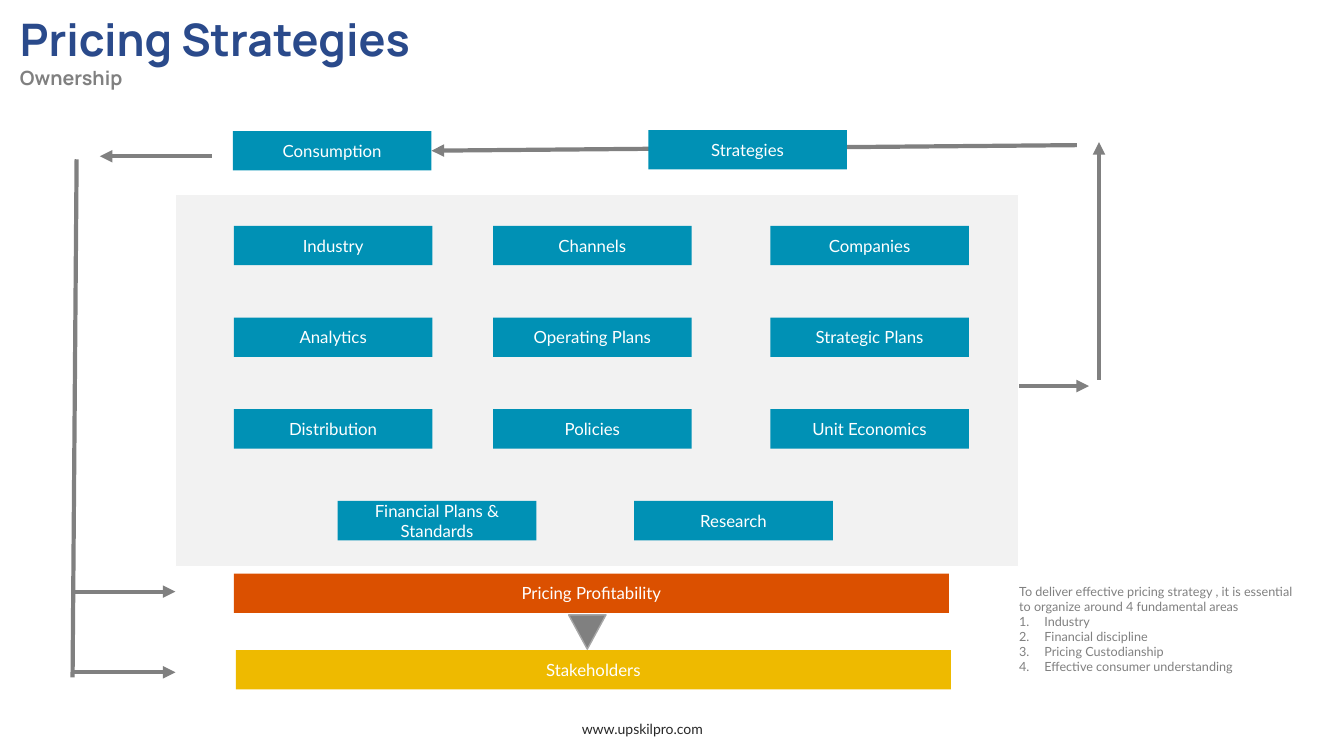
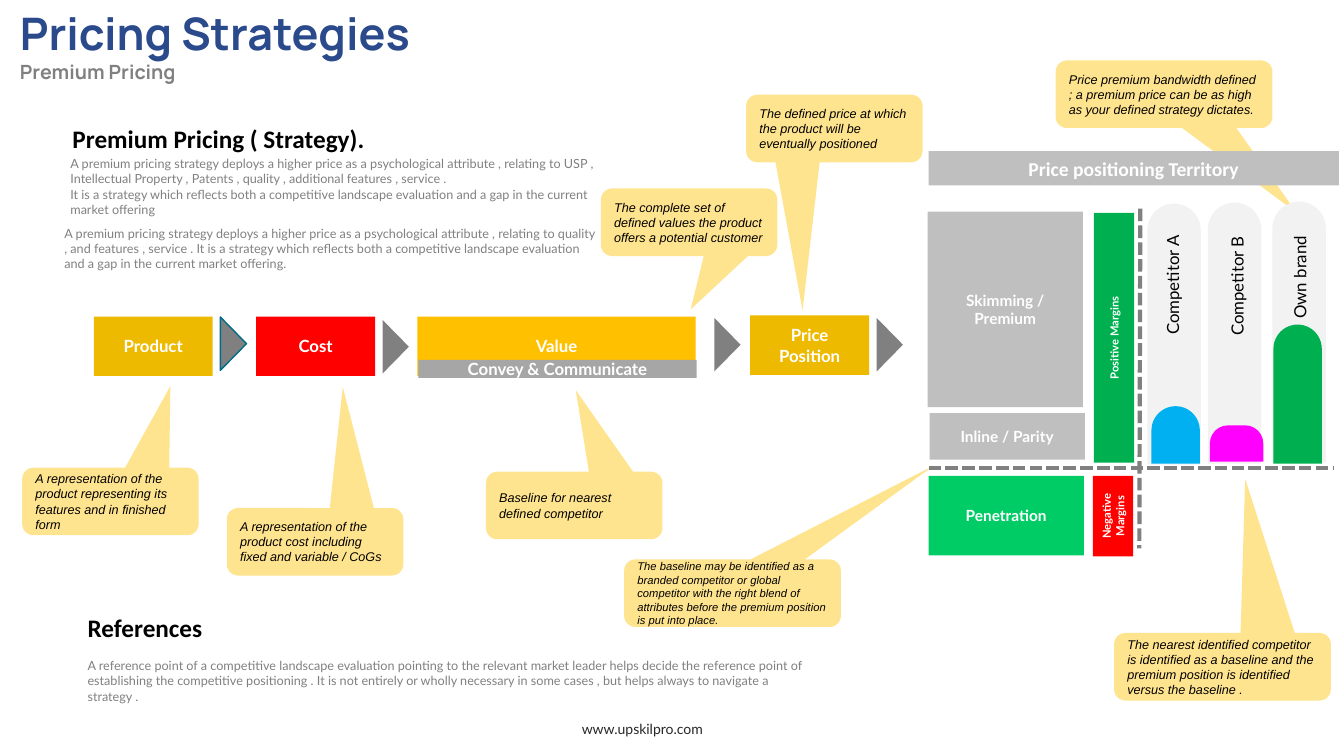
from dataclasses import dataclass

from lxml import etree
from pptx import Presentation
from pptx.dml.color import RGBColor
from pptx.enum.dml import MSO_LINE
from pptx.enum.shapes import MSO_CONNECTOR, MSO_SHAPE
from pptx.enum.text import MSO_ANCHOR, PP_ALIGN
from pptx.oxml.ns import qn
from pptx.util import Pt

RECT = MSO_SHAPE.RECTANGLE
TRIANGLE = MSO_SHAPE.ISOSCELES_TRIANGLE
ROUND_TOP = MSO_SHAPE.ROUND_2_SAME_RECTANGLE
CALLOUT = MSO_SHAPE.ROUNDED_RECTANGULAR_CALLOUT
STRAIGHT = MSO_CONNECTOR.STRAIGHT
DASH = MSO_LINE.SQUARE_DOT
LEFT, CENTER = PP_ALIGN.LEFT, PP_ALIGN.CENTER
TOP, MIDDLE = MSO_ANCHOR.TOP, MSO_ANCHOR.MIDDLE
RIGHT_SIDE = 3
PX = 9144


@dataclass(frozen=True)
class Theme:
    navy: str = "2A4A8B"
    grey: str = "808080"
    mid_grey: str = "A6A6A6"
    light_grey: str = "BFBFBF"
    pale: str = "F2F2F2"
    white: str = "FFFFFF"
    black: str = "000000"
    ink: str = "272727"
    teal: str = "0091B5"
    dark_teal: str = "006B86"
    orange: str = "DB5000"
    gold: str = "EEBA00"
    amber: str = "FFC000"
    note: str = "FFE48F"
    red: str = "FF0000"
    green: str = "00B050"
    mint: str = "00CC66"
    blue: str = "00B0F0"
    magenta: str = "FF00FF"
    body_font: str = "Lato"
    title_font: str = "Manrope"
    head_font: str = "Calibri"
    note_font: str = "Arial"
    title: int = 32
    head: int = 18
    subtitle: int = 14
    label: int = 12
    level: int = 11
    footer: int = 10
    body: int = 9
    small: int = 8


T = Theme()


def rgb(value):
    return RGBColor.from_string(value)


def px(*values):
    return [round(v * PX) for v in values]


def write(sp, text, size=T.label, font=T.body_font, color=T.white, bold=False,
          italic=False, align=CENTER, anchor=MIDDLE, numbered=False, more=False):
    tf = sp.text_frame
    tf.word_wrap = True
    tf.vertical_anchor = anchor
    for i, line in enumerate(text.split("\n")):
        p = tf.add_paragraph() if i or more else tf.paragraphs[0]
        p.alignment = align
        if numbered:
            pPr = p._p.get_or_add_pPr()
            pPr.set("marL", str(25 * PX))
            pPr.set("indent", str(-25 * PX))
            etree.SubElement(pPr, qn("a:buAutoNum"), type="arabicPeriod")
        r = p.add_run()
        r.text = line
        f = r.font
        f.size, f.name, f.bold, f.italic = Pt(size), font, bold, italic
        f.color.rgb = rgb(color)


def add_text(s, box, text, **fmt):
    sp = s.shapes.add_textbox(*px(*box))
    write(sp, text, **{"align": LEFT, "anchor": TOP, "color": T.grey, "size": T.body, **fmt})
    return sp


def add_shape(s, kind, box, fill, text="", line=None, rot=0, **fmt):
    sp = s.shapes.add_shape(kind, *px(*box))
    sp.shadow.inherit = False
    sp.rotation = rot
    sp.fill.solid()
    sp.fill.fore_color.rgb = rgb(fill)
    if line:
        sp.line.color.rgb = rgb(line)
        sp.line.width = Pt(1)
    else:
        sp.line.fill.background()
    if text:
        write(sp, text, **fmt)
    return sp


def add_line(s, start, end, arrow=True, dash=None, target=None):
    cx = s.shapes.add_connector(STRAIGHT, *px(*start, *end))
    cx.line.color.rgb = rgb(T.grey)
    cx.line.width = Pt(3)
    if dash:
        cx.line.dash_style = dash
    if arrow:
        etree.SubElement(cx.line._get_or_add_ln(), qn("a:tailEnd"), type="triangle")
    etree.SubElement(cx._element.spPr, qn("a:effectLst"))
    if target:
        cx.end_connect(target, RIGHT_SIDE)


def add_callout(s, box, tip, text, size=T.body):
    x, y, w, h = box
    sp = add_shape(s, CALLOUT, box, T.note, text, size=size, font=T.note_font,
                   color=T.black, italic=True, align=LEFT)
    sp.adjustments[0] = (tip[0] - x - w / 2) / w
    sp.adjustments[1] = (tip[1] - y - h / 2) / h


def new_slide(prs, top, subtitle):
    s = prs.slides.add_slide(prs.slide_layouts[6])
    sp = add_text(s, (10, top, 1053, 88), "Pricing Strategies", size=T.title,
                  font=T.title_font, color=T.navy, bold=True)
    write(sp, subtitle, size=T.subtitle, font=T.title_font, color=T.grey, bold=True,
          align=LEFT, anchor=TOP, more=True)
    add_text(s, (412, 710, 450, 40), "www.upskilpro.com", size=T.footer,
             color=T.ink, align=CENTER)
    return s


def area_panel(s, box):
    x, y, _, _ = box
    add_shape(s, RECT, box, T.pale, line=T.white)
    cols = (58, 315, 590)
    rows = (
        (cols, ("Industry", "Channels", "Companies")),
        (cols, ("Analytics", "Operating Plans", "Strategic Plans")),
        (cols, ("Distribution", "Policies", "Unit Economics")),
        ((161, 455), ("Financial Plans & Standards", "Research")),
    )
    for i, (lefts, names) in enumerate(rows):
        for left, name in zip(lefts, names):
            add_shape(s, RECT, (x + left, y + 31 + 91 * i, 197, 39), T.teal, name)


def flow_loop(s, box):
    x, y, w, _ = box
    sp = add_shape(s, RECT, (x + 159, y + 1, 197, 39), T.teal, "Consumption")
    add_line(s, (x + 996, y + 15), (x + 356, y + 20), target=sp)
    add_shape(s, RECT, (x + 571, y, 197, 39), T.teal, "Strategies")
    add_line(s, (x, y + 543), (x + 4, y + 29), arrow=False)
    for start, end in (
        ((138, 26), (27, 26)),
        ((0, 458), (102, 458)),
        ((0, 538), (102, 538)),
        ((938, 254), (1008, 254)),
        ((w, 248), (w, 12)),
    ):
        add_line(s, (x + start[0], y + start[1]), (x + end[0], y + end[1]))


def outcome_bars(s, box):
    x, y, w, h = box
    add_shape(s, RECT, (x, y, w, 39), T.orange, "Pricing Profitability")
    add_shape(s, TRIANGLE, (x + 332, y + 41, 37, 34), T.grey, line=T.mid_grey, rot=180)
    add_shape(s, RECT, (x + 2, y + h - 39, w, 39), T.gold, "Stakeholders")


def ownership_slide(prs):
    s = new_slide(prs, 7, "Ownership")
    flow_loop(s, (72, 129, 1018, 543))
    area_panel(s, (174, 193, 836, 369))
    outcome_bars(s, (232, 569, 709, 115))
    sp = add_text(s, (1001, 574, 299, 131),
                  "To deliver effective pricing strategy , it is essential to organize "
                  "around 4 fundamental areas")
    write(sp, "Industry\nFinancial discipline\nPricing Custodianship\n"
          "Effective consumer understanding", size=T.body, color=T.grey, align=LEFT,
          anchor=TOP, numbered=True, more=True)


def price_chain(s, box):
    x, y, _, h = box
    for left, top, width, fill, name in (
        (0, 1, 118, T.gold, "Product"),
        (161, 1, 118, T.red, "Cost"),
        (321, 1, 276, T.amber, "Value"),
        (651, 0, 118, T.gold, "Price Position"),
    ):
        add_shape(s, RECT, (x + left, y + top, width, h), fill, name, bold=True)
    for left, top, line in ((112, 15, T.dark_teal), (273, 18, None),
                            (602, 16, None), (763, 16, None)):
        add_shape(s, TRIANGLE, (x + left, y + top, 53, 26), T.grey, line=line, rot=90)
    add_shape(s, RECT, (x + 322, y + 44, 276, 18), T.mid_grey,
              "Convey & Communicate", bold=True)


def price_territory(s, box):
    x, y, w, _ = box
    add_shape(s, RECT, (x + 1, y, w, 34), T.light_grey, "Price positioning Territory",
              size=T.subtitle, font=T.head_font, bold=True)
    for left, top, height, fill, name in (
        (0, 60, 194, T.light_grey, "Skimming / Premium"),
        (2, 260, 46, T.light_grey, "Inline / Parity"),
        (1, 322, 79, T.mint, "Penetration"),
    ):
        add_shape(s, RECT, (x + left, y + top, 154, height), fill, name,
                  size=T.level, bold=True)
    for left, top, width, fill, name in (
        (61, 165, 248, T.green, "Positive Margins"),
        (144, 342, 80, T.red, "Negative Margins"),
    ):
        add_shape(s, RECT, (x + left, y + top, width, 40), fill, name, rot=270,
                  size=T.small, bold=True)
    brands = (
        (218, 52, (222, 253, 48, 57), T.blue, "Competitor A", (183, 117)),
        (278, 51, (280, 272, 53, 36), T.magenta, "Competitor B", (247, 118)),
        (342, 50, (343, 172, 48, 138), T.green, "Own brand", (309, 101)),
    )
    for left, top, (bx, by, bw, bh), fill, name, (tx, ty) in brands:
        for part, color in (((x + left, y + top, 53, 259), T.pale),
                            ((x + bx, y + by, bw, bh), fill)):
            sp = add_shape(s, ROUND_TOP, part, color)
            sp.adjustments[0] = 0.5
        sp = add_text(s, (x + tx, y + ty, 120, 30), name, size=T.label, color=T.black)
        sp.text_frame.margin_right = 0
        sp.rotation = 270
    for start, end in (((1, 314), (403, 314)), ((211, 57), (210, 394))):
        add_line(s, (x + start[0], y + start[1]), (x + end[0], y + end[1]),
                 arrow=False, dash=DASH)


def strategy_text(s, box):
    x, y, _, _ = box
    for left, top, text in (
        (8, 0, "Premium Pricing ( Strategy)."),
        (23, 486, "References"),
    ):
        add_text(s, (x + left, y + top, 361, 40), text, size=T.head, font=T.head_font,
                 color=T.black, bold=True)
    for left, top, width, height, text in (
        (6, 33, 556, 71,
         "A premium pricing strategy deploys a higher price as a psychological attribute , "
         "relating to USP , Intellectual Property , Patents , quality , additional features , "
         "service .\nIt is a strategy which reflects both a competitive landscape evaluation "
         "and a gap in the current market offering"),
        (0, 102, 548, 56,
         "A premium pricing strategy deploys a higher price as a psychological attribute , "
         "relating to quality , and features , service . It is a strategy which reflects both "
         "a competitive landscape evaluation and a gap in the current market offering."),
        (23, 531, 735, 61,
         "A reference point of a competitive landscape evaluation pointing to the relevant "
         "market leader helps decide the reference point of establishing the competitive "
         "positioning . It is not entirely or wholly necessary in some cases , but helps "
         "always to navigate a strategy ."),
    ):
        add_text(s, (x + left, y + top, width, height), text)


def premium_slide(prs):
    s = new_slide(prs, 1, "Premium Pricing")
    strategy_text(s, (54, 117, 758, 592))
    for left, top, width, tip, text in (
        (482, 468, 175, (571, 387), "Baseline for nearest defined competitor"),
        (740, 94, 175, (796, 308),
         "The defined price at which the product will be eventually positioned"),
        (22, 464, 175, (169, 383),
         "A representation of the product representing its features and in finished form"),
        (596, 187, 175, (685, 307),
         "The complete set of defined values the product offers a potential customer"),
        (225, 504, 175, (340, 384),
         "A representation of the product cost including fixed and variable / CoGs"),
        (1047, 60, 215, (1286, 211),
         "Price premium bandwidth defined ; a premium price can be as high as your defined "
         "strategy dictates."),
        (1105, 628, 215, (1235, 475),
         "The nearest identified competitor is identified as a baseline and the premium "
         "position is identified versus the baseline ."),
    ):
        add_callout(s, (left, top, width, 67), tip, text)
    add_callout(s, (619, 555, 215, 67), (926, 462),
                "The baseline may be identified as a branded competitor or global competitor "
                "with the right blend of attributes before the premium position is put into "
                "place.", size=T.small)
    price_chain(s, (93, 313, 809, 59))
    price_territory(s, (920, 150, 407, 401))


def main():
    prs = Presentation()
    prs.slide_width, prs.slide_height = px(1333, 750)
    ownership_slide(prs)
    premium_slide(prs)
    prs.save("out.pptx")


if __name__ == "__main__":
    main()
